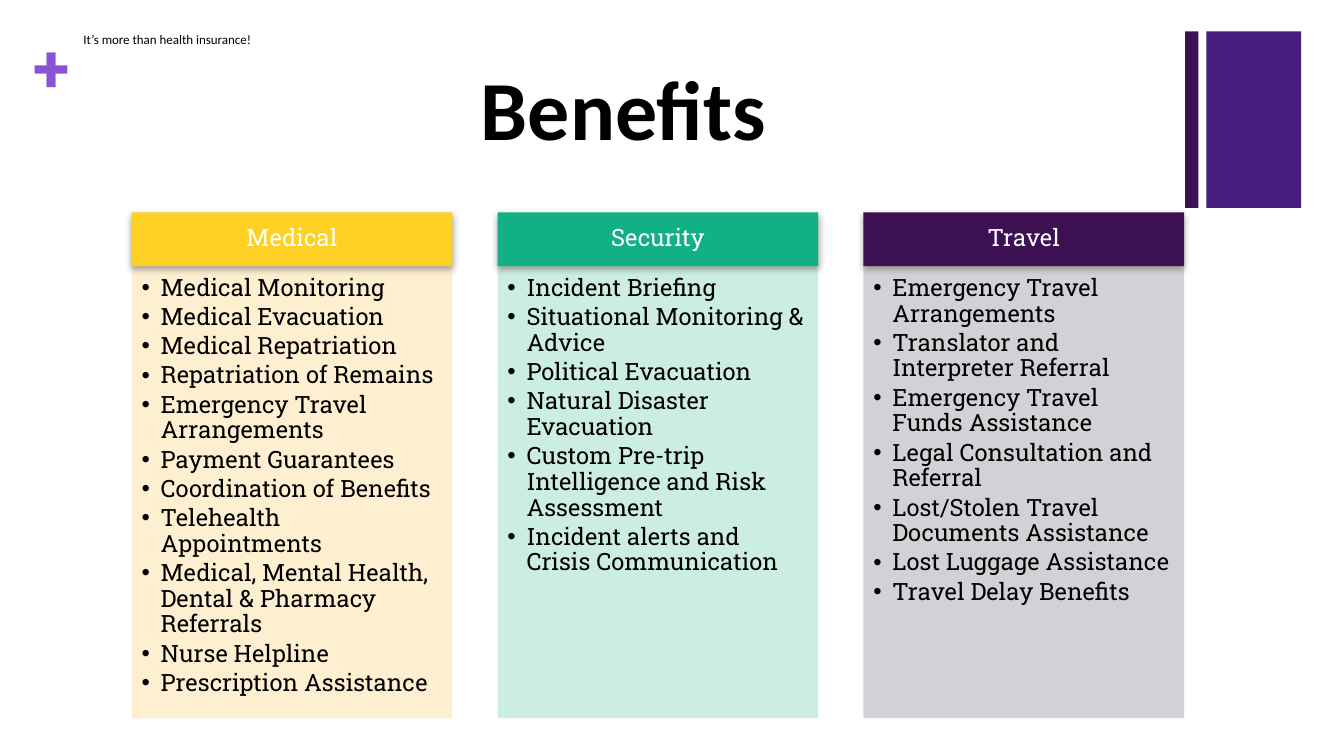
from lxml import etree
from pptx import Presentation
from pptx.dml.color import RGBColor
from pptx.enum.shapes import MSO_SHAPE
from pptx.enum.text import MSO_ANCHOR, MSO_AUTO_SIZE, PP_ALIGN
from pptx.oxml import parse_xml
from pptx.oxml.ns import qn
from pptx.util import Cm, Pt

RECT = MSO_SHAPE.RECTANGLE
TOP, MIDDLE = MSO_ANCHOR.TOP, MSO_ANCHOR.MIDDLE
LEFT, CENTER = PP_ALIGN.LEFT, PP_ALIGN.CENTER
FIXED = MSO_AUTO_SIZE.NONE
SLAB, SANS = "Roboto Slab", "Calibri"
SHADE = """<a:effectLst xmlns:a="http://schemas.openxmlformats.org/drawingml/2006/main">
<a:outerShdw blurRad="63500" dist="25400" dir="5400000" rotWithShape="0">
<a:srgbClr val="808080"><a:alpha val="75000"/></a:srgbClr>
</a:outerShdw></a:effectLst>"""

COLUMNS = [
    ("Medical", "FDD023", "FEEECD", [
        "Medical Monitoring", "Medical Evacuation", "Medical Repatriation",
        "Repatriation of Remains", "Emergency Travel Arrangements",
        "Payment Guarantees", "Coordination of Benefits",
        "Telehealth Appointments",
        "Medical, Mental Health, Dental & Pharmacy Referrals",
        "Nurse Helpline", "Prescription Assistance"]),
    ("Security", "11B185", "C7EDDD", [
        "Incident Briefing", "Situational Monitoring & Advice",
        "Political Evacuation", "Natural Disaster Evacuation",
        "Custom Pre-trip Intelligence and Risk Assessment",
        "Incident alerts and Crisis Communication"]),
    ("Travel", "3C1053", "CECCD1", [
        "Emergency Travel Arrangements",
        "Translator and Interpreter Referral",
        "Emergency Travel Funds Assistance",
        "Legal Consultation and Referral",
        "Lost/Stolen Travel Documents Assistance",
        "Lost Luggage Assistance", "Travel Delay Benefits"]),
]


def block(color, *place):
    shape = slide.shapes.add_shape(RECT, *map(Cm, place))
    shape.shadow.inherit = False
    shape.line.fill.background()
    shape.fill.solid()
    shape.fill.fore_color.rgb = RGBColor.from_string(color)
    return shape


def write(shape, lines, size, face, color, bold=False, align=LEFT,
          anchor=TOP, pads=(0.25, 0.13, 0.25, 0.13), para={}):
    frame = shape.text_frame
    sides = ("margin_left", "margin_top", "margin_right", "margin_bottom")
    look = dict(zip(sides, map(Cm, pads)), word_wrap=True,
                auto_size=FIXED, vertical_anchor=anchor)
    for name, value in look.items():
        setattr(frame, name, value)
    frame.text = "\n".join(lines)
    for item in frame.paragraphs:
        for name, value in {"alignment": align, **para}.items():
            setattr(item, name, value)
        font = item.runs[0].font
        for name, value in {"size": Pt(size), "name": face, "bold": bold}.items():
            setattr(font, name, value)
        font.color.rgb = RGBColor.from_string(color)


deck = Presentation()
deck.slide_width, deck.slide_height = Cm(33.87), Cm(19.05)
slide = deck.slides.add_slide(deck.slide_layouts[5])

title = slide.shapes.title
place = {"left": 1.85, "top": 0.66, "width": 27.99, "height": 3.1}
for name, value in place.items():
    setattr(title, name, Cm(value))
write(title, ["It’s more than health insurance!"], 9.3, SANS, "000000")

block("461D7C", 30.4, 0.79, 2.39, 4.45)
block("3C1053", 29.87, 0.79, 0.33, 4.45)
plus = slide.shapes.add_textbox(Cm(0.84), Cm(0.64), Cm(0.97), Cm(2.06))
write(plus, ["+"], 48, SLAB, "8B51D6", bold=True, pads=(0, 0, 0, 0))

for index, (label, dark, pale, items) in enumerate(COLUMNS):
    left = 3.32 + index * 9.22
    body = block(pale, left, 6.7, 8.08, 11.4)
    tint = body.fill._xPr.find(qn("a:solidFill"))[0]
    etree.SubElement(tint, qn("a:alpha"), val="90000")
    write(body, items, 17, SLAB, "000000", pads=(0.25, 0.25, 0.33, 0.38),
          para={"level": 1, "line_spacing": 0.9, "space_after": Pt(2.5)})
    for item in body.text_frame.paragraphs:
        props = item._p.get_or_add_pPr()
        props.set("marL", str(Cm(0.48)))
        props.set("indent", str(Cm(-0.48)))
        etree.SubElement(props, qn("a:buFont"), typeface="Arial")
        etree.SubElement(props, qn("a:buChar"), char="•")

    head = block(dark, left, 5.35, 8.08, 1.36)
    effect = head._element.spPr.find(qn("a:effectLst"))
    effect.getparent().replace(effect, parse_xml(SHADE))
    write(head, [label], 17, SLAB, "FFFFFF", align=CENTER, anchor=MIDDLE,
          pads=(0.33, 0.2, 0.33, 0.2), para={"line_spacing": 0.9})

banner = slide.shapes.add_textbox(Cm(2.82), Cm(1.3), Cm(25.78), Cm(2.82))
write(banner, ["Benefits"], 60, SANS, "000000", bold=True, align=CENTER)

deck.save("out.pptx")
